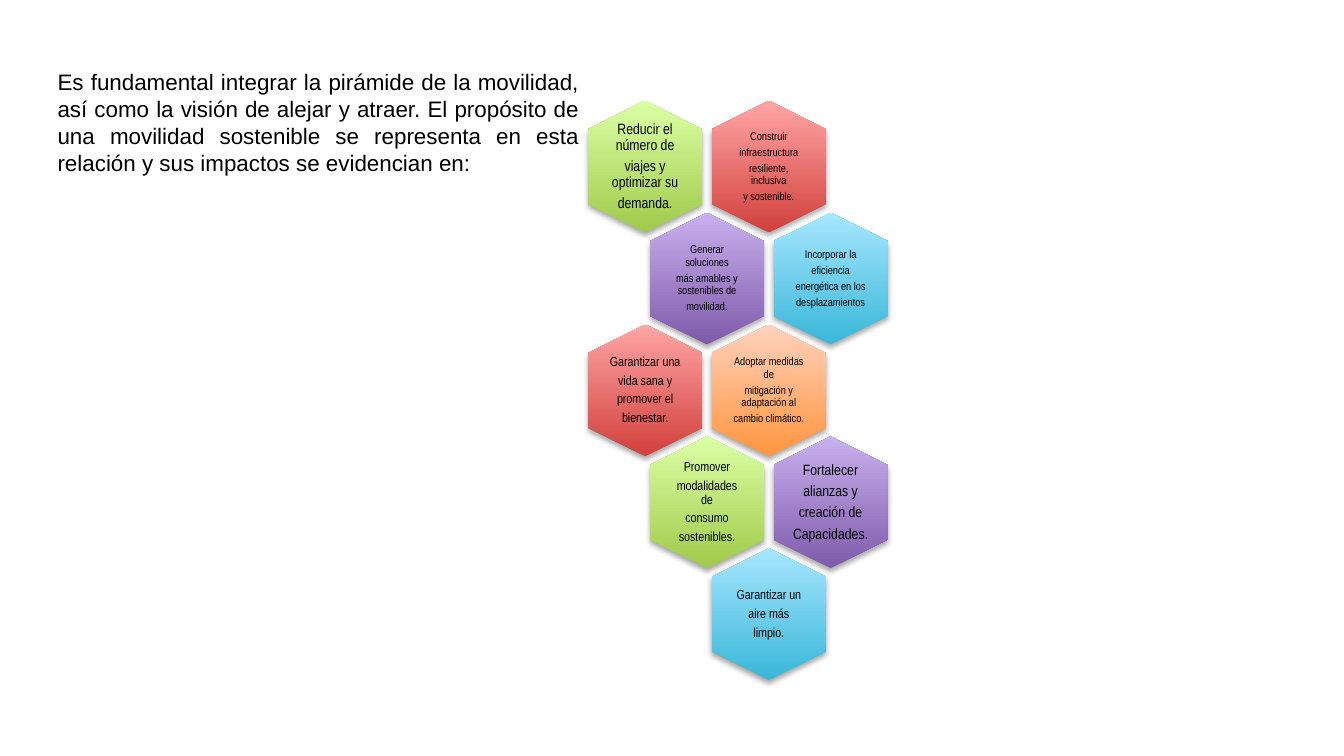
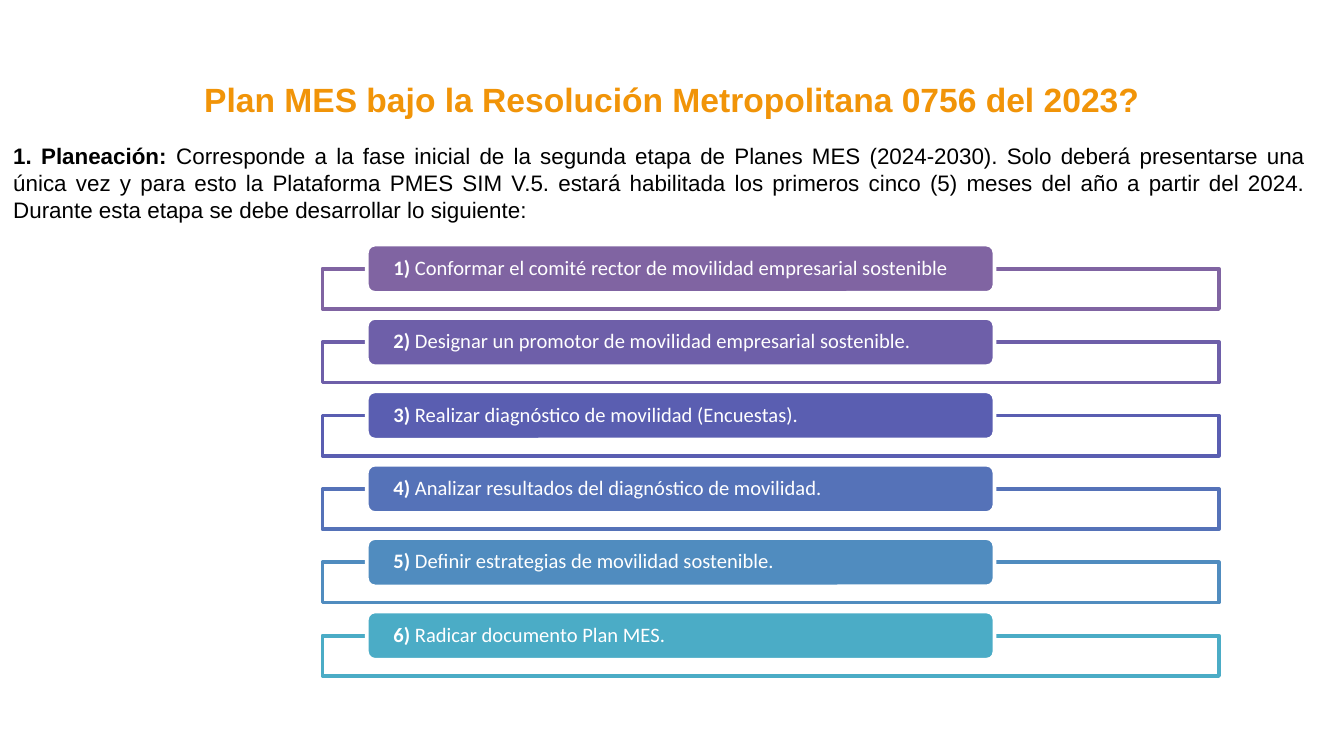
from dataclasses import dataclass

from lxml.etree import SubElement
from pptx import Presentation
from pptx.dml.color import RGBColor
from pptx.enum.shapes import MSO_SHAPE as Shape
from pptx.enum.text import MSO_ANCHOR as Anchor, MSO_AUTO_SIZE as AutoSize, PP_ALIGN as Align
from pptx.oxml.ns import qn
from pptx.util import Inches, Pt


@dataclass(frozen=True)
class Theme:
    body_font: str = "Arial"
    cell_font: str = "Arial Narrow"
    step_font: str = "Calibri"
    title_size: int = 18
    body_size: int = 12
    step_size: int = 11
    line_width: int = 2
    ink: str = "000000"
    paper: str = "FFFFFF"
    accent: str = "F19408"


THEME = Theme()
PAGE_WIDTH = Inches(10)
PAGE_HEIGHT = PAGE_WIDTH * 9 // 16

# Gradient ends: bottom, top
GREEN = ("A0CA4A", "DAFFA5")
RED = ("D1403C", "FFA6A5")
PURPLE = ("7F5BAB", "C8B0ED")
BLUE = ("39B7D8", "A7E6FF")
ORANGE = ("FF953E", "FFD2BD")

INTRO = (
    "Es fundamental integrar la pirámide de la movilidad, así como la visión de "
    "alejar y atraer. El propósito de una movilidad sostenible se representa en "
    "esta relación y sus impactos se evidencian en:"
)
# Half-column, row, gradient, type size, lines
IMPACTS = [
    (2, 0, RED, 6, ["Construir", "infraestructura", "resiliente, inclusiva", "y sostenible."]),
    (0, 0, GREEN, 8, ["Reducir el número de", "viajes y optimizar su", "demanda."]),
    (1, 1, PURPLE, 6, ["Generar soluciones", "más amables y sostenibles de", "movilidad."]),
    (3, 1, BLUE, 6, ["Incorporar la", "eficiencia", "energética en los", "desplazamientos"]),
    (2, 2, ORANGE, 6, ["Adoptar medidas de", "mitigación y adaptación al", "cambio climático."]),
    (0, 2, RED, 7, ["Garantizar una", "vida sana y", "promover el", "bienestar."]),
    (1, 3, GREEN, 7, ["Promover", "modalidades de", "consumo", "sostenibles."]),
    (3, 3, PURPLE, 8, ["Fortalecer", "alianzas y", "creación de", "Capacidades."]),
    (2, 4, BLUE, 7, ["Garantizar un", "aire más", "limpio."]),
]
PLAN_TITLE = "Plan MES bajo la Resolución Metropolitana 0756 del 2023?"
PLANNING = (
    "Corresponde a la fase inicial de la segunda etapa de Planes MES (2024-2030). "
    "Solo deberá presentarse una única vez y para esto la Plataforma PMES SIM V.5. "
    "estará habilitada los primeros cinco (5) meses del año a partir del 2024. "
    "Durante esta etapa se debe desarrollar lo siguiente:"
)
STEPS = [
    ("8064A2", "Conformar el comité rector de movilidad empresarial sostenible"),
    ("6E5FA9", "Designar un promotor de movilidad empresarial sostenible."),
    ("5A5EB1", "Realizar diagnóstico de movilidad (Encuestas)."),
    ("5572B8", "Analizar resultados del diagnóstico de movilidad."),
    ("508CBF", "Definir estrategias de movilidad sostenible."),
    ("4BACC6", "Radicar documento Plan MES."),
]


def rgb(value):
    return RGBColor.from_string(value)


def inches(*values):
    return [Inches(value) for value in values]


def spread(first, last, count):
    """Return count evenly spaced positions from first to last."""
    return [first + (last - first) * index / (count - 1) for index in range(count)]


def apply(target, formats):
    for name, value in formats.items():
        setattr(target, name, value)


def font_format(name, size, bold=False):
    return {"name": name, "size": Pt(size), "bold": bold}


def add_span(para, text, formats, color=THEME.ink):
    span = para.add_run()
    span.text = text
    apply(span.font, formats)
    span.font.color.rgb = rgb(color)


def set_frame(frame, anchor=Anchor.TOP, side=0.1, top=0.05):
    apply(frame, {
        "word_wrap": True, "auto_size": AutoSize.NONE, "vertical_anchor": anchor,
        "margin_left": Inches(side), "margin_right": Inches(side),
        "margin_top": Inches(top), "margin_bottom": Inches(top),
    })


def add_justified(slide, place, spans):
    """Add a justified paragraph from (text, bold) spans."""
    frame = slide.shapes.add_textbox(*inches(*place)).text_frame
    set_frame(frame)
    para = frame.paragraphs[0]
    para.alignment = Align.JUSTIFY
    for text, bold in spans:
        add_span(para, text, font_format(THEME.body_font, THEME.body_size, bold))


def set_title(slide, text):
    title = slide.shapes.title
    apply(title, dict(zip(("left", "top", "width", "height"), inches(0, 0.47, 10, 0.54))))
    set_frame(title.text_frame, Anchor.MIDDLE)
    para = title.text_frame.paragraphs[0]
    para.alignment = Align.CENTER
    add_span(para, text, font_format(THEME.body_font, THEME.title_size, True), THEME.accent)


def set_alpha(color, percent):
    SubElement(color, qn("a:alpha"), val=str(percent * 1000))


def add_soft_shadow(shape):
    shape.shadow.inherit = False
    effects = shape._element.spPr.find(qn("a:effectLst"))
    shadow = SubElement(
        effects, qn("a:outerShdw"), blurRad=str(Pt(3.1)), dist=str(Pt(1.8)),
        dir="5400000", rotWithShape="0",
    )
    set_alpha(SubElement(shadow, qn("a:srgbClr"), val=THEME.ink), 35)


def fill_upward(shape, colors):
    """Fill with a gradient that stays upright when the shape is turned."""
    shape.fill.gradient()
    shape.fill.gradient_angle = 90
    for stop, color in zip(shape.fill.gradient_stops, colors):
        stop.color.rgb = rgb(color)
    shape._element.spPr.find(qn("a:gradFill")).set("rotWithShape", "0")


def add_impact(slide, center_x, center_y, inset, colors, size, lines):
    def centered(width, height):
        return inches(center_x - width / 2, center_y - height / 2, width, height)

    hexagon = slide.shapes.add_shape(Shape.HEXAGON, *centered(0.98, 0.85))
    hexagon.rotation = 90
    fill_upward(hexagon, colors)
    hexagon.line.fill.background()
    add_soft_shadow(hexagon)

    frame = slide.shapes.add_textbox(*centered(0.59, 0.67)).text_frame
    set_frame(frame, Anchor.MIDDLE, inset, inset)
    for index, line in enumerate(lines):
        para = frame.add_paragraph() if index else frame.paragraphs[0]
        apply(para, {"alignment": Align.CENTER, "line_spacing": 0.9,
                     "space_after": Pt(0.35 * size)})
        add_span(para, line, font_format(THEME.cell_font, size))


def add_panel(slide, kind, place, fill, line):
    panel = slide.shapes.add_shape(kind, *inches(*place))
    panel.shadow.inherit = False
    panel.fill.solid()
    panel.fill.fore_color.rgb = rgb(fill)
    panel.line.color.rgb = rgb(line)
    panel.line.width = Pt(THEME.line_width)
    return panel


def add_step(slide, number, top, color, text):
    tray = add_panel(slide, Shape.RECTANGLE, (2.4, top, 6.67, 0.3), THEME.paper, color)
    set_alpha(tray._element.spPr.find(qn("a:solidFill"))[0], 90)
    tab = add_panel(slide, Shape.ROUNDED_RECTANGLE, (2.73, top - 0.18, 4.67, 0.36),
                    color, THEME.paper)
    set_frame(tab.text_frame, Anchor.MIDDLE, 0.18, 0)
    para = tab.text_frame.paragraphs[0]
    apply(para, {"alignment": Align.LEFT, "line_spacing": 0.9})
    for part, bold in ((f"{number}) ", True), (text, False)):
        add_span(para, part, font_format(THEME.step_font, THEME.step_size, bold), THEME.paper)


def build_impacts(deck):
    slide = deck.slides.add_slide(deck.slide_layouts.get_by_name("Blank"))
    add_justified(slide, (0.33, 0.46, 4.08, 0.91), [(INTRO, False)])
    columns, rows = spread(4.8, 6.18, 4), spread(1.24, 4.57, 5)
    for column, row, colors, size, lines in IMPACTS:
        inset = 0.03 if column in (1, 2) else 0
        add_impact(slide, columns[column], rows[row], inset, colors, size, lines)


def build_plan(deck):
    slide = deck.slides.add_slide(deck.slide_layouts.get_by_name("Title Only"))
    set_title(slide, PLAN_TITLE)
    add_justified(slide, (0, 1.01, 9.82, 0.76), [("1. Planeación: ", True), (PLANNING, False)])
    tops = spread(2, 4.73, len(STEPS))
    for number, (top, (color, text)) in enumerate(zip(tops, STEPS), start=1):
        add_step(slide, number, top, color, text)


def main():
    deck = Presentation()
    apply(deck, {"slide_width": PAGE_WIDTH, "slide_height": PAGE_HEIGHT})
    build_impacts(deck)
    build_plan(deck)
    deck.save("out.pptx")


if __name__ == "__main__":
    main()
